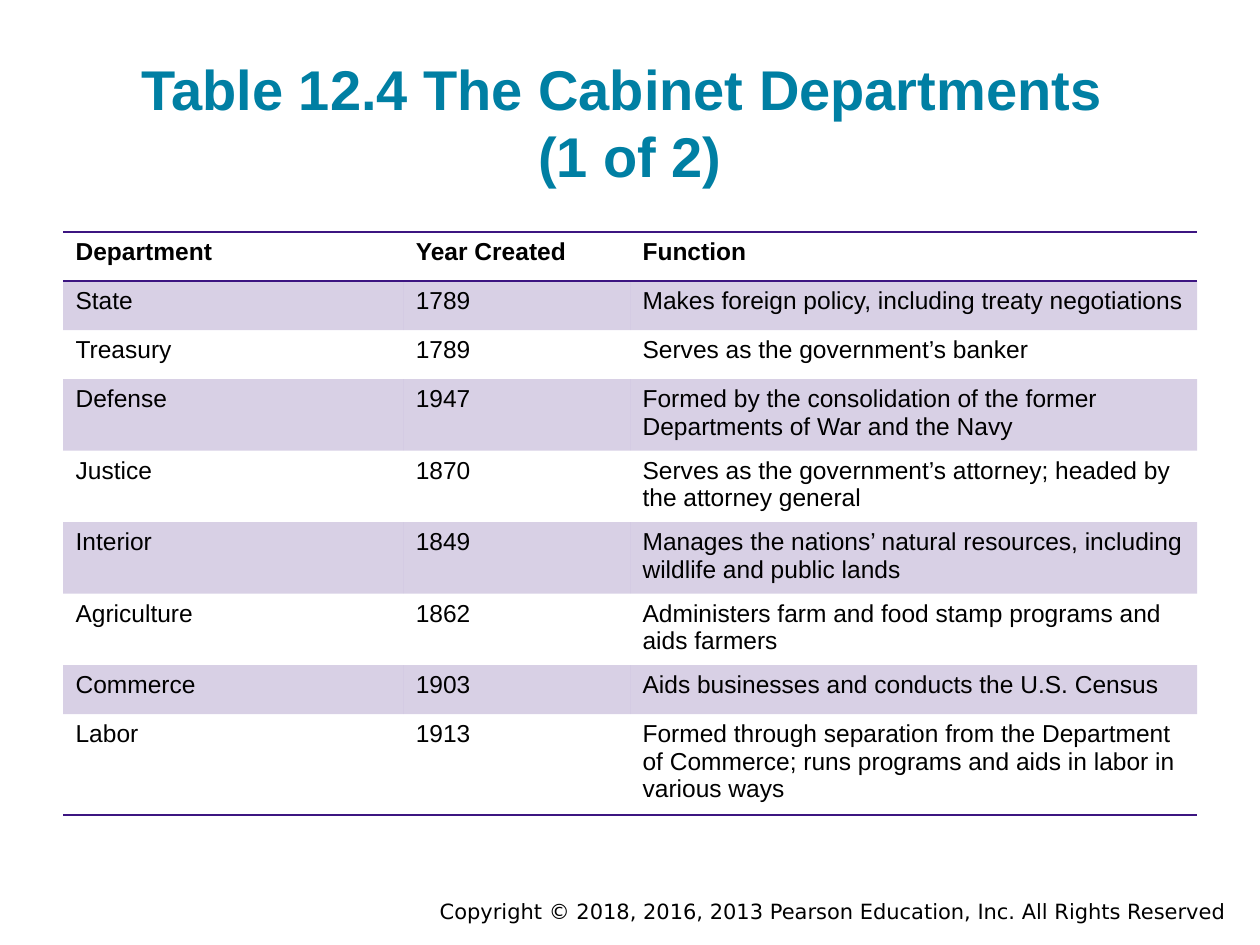
"""Build the slide with the table of Cabinet departments."""
from lxml import etree
from pptx import Presentation
from pptx.dml.color import RGBColor
from pptx.enum.text import MSO_ANCHOR, MSO_AUTO_SIZE, PP_ALIGN
from pptx.oxml.ns import qn
from pptx.util import Inches, Pt

CENTER, RIGHT = PP_ALIGN.CENTER, PP_ALIGN.RIGHT
BOTTOM, NO_FIT = MSO_ANCHOR.BOTTOM, MSO_AUTO_SIZE.NONE
TEAL = RGBColor(0x00, 0x7F, 0xA3)
PURPLE = RGBColor(0x3C, 0x15, 0x81)
BLACK = RGBColor(0, 0, 0)
NO_STYLE = "{2D5ABB26-0587-4C30-8999-92F81FD0307C}"

TITLE = "Table 12.4 The Cabinet Departments \v(1 of 2)"
COPYRIGHT = "Copyright © 2018, 2016, 2013 Pearson Education, Inc. All Rights Reserved"
ROWS = [
    ("Department", "Year Created", "Function"),
    ("State", "1789", "Makes foreign policy, including treaty negotiations"),
    ("Treasury", "1789", "Serves as the government’s banker"),
    ("Defense", "1947", "Formed by the consolidation of the former Departments of War and the Navy"),
    ("Justice", "1870", "Serves as the government’s attorney; headed by the attorney general"),
    ("Interior", "1849", "Manages the nations’ natural resources, including wildlife and public lands"),
    ("Agriculture", "1862", "Administers farm and food stamp programs and aids farmers"),
    ("Commerce", "1903", "Aids businesses and conducts the U.S. Census"),
    ("Labor", "1913", "Formed through separation from the Department of Commerce; "
                      "runs programs and aids in labor in various ways"),
]
COL_WIDTHS = [2.7, 1.8, 4.5]
ROW_HEIGHTS = [0.39] * 3 + [0.55] * 4 + [0.39, 0.77]


def style_text(tf, name, size, color, bold=False, align=None):
    for p in tf.paragraphs:
        p.alignment = align
        for r in p.runs:
            r.font.name, r.font.size, r.font.bold = name, Pt(size), bold
            r.font.color.rgb = color


def add_borders(cell, tags):
    tcPr = cell._tc.get_or_add_tcPr()
    for i, tag in enumerate(tags):
        ln = etree.Element(qn(tag), w=str(Pt(1)))
        fill = etree.SubElement(ln, qn("a:solidFill"))
        etree.SubElement(fill, qn("a:srgbClr"), val=str(PURPLE))
        tcPr.insert(i, ln)


def fill_band(cell):
    cell.fill.solid()
    cell.fill.fore_color.rgb = PURPLE
    color = cell._tc.tcPr.find(".//" + qn("a:srgbClr"))
    etree.SubElement(color, qn("a:alpha"), val="20000")


def add_title(s):
    sp = s.shapes.title
    sp.left, sp.top, sp.width, sp.height = map(Inches, (0.5, 0.24, 9, 1.36))
    tf = sp.text_frame
    tf.text = TITLE
    tf.auto_size, tf.vertical_anchor = NO_FIT, BOTTOM
    tf.margin_left = tf.margin_right = tf.margin_top = tf.margin_bottom = Inches(0.1)
    style_text(tf, "Arial", 32, TEAL, True, CENTER)


def add_departments(s):
    frame = s.shapes.add_table(len(ROWS), len(COL_WIDTHS), Inches(0.5), Inches(1.84),
                               Inches(sum(COL_WIDTHS)), Inches(sum(ROW_HEIGHTS)))
    table = frame.table
    table._tbl.tblPr.find(qn("a:tableStyleId")).text = NO_STYLE
    for column, width in zip(table.columns, COL_WIDTHS):
        column.width = Inches(width)
    borders = {0: ("a:lnT", "a:lnB"), len(ROWS) - 1: ("a:lnB",)}
    for i, (row, height, texts) in enumerate(zip(table.rows, ROW_HEIGHTS, ROWS)):
        row.height = Inches(height)
        for cell, text in zip(row.cells, texts):
            cell.text_frame.text = text
            style_text(cell.text_frame, "Arial", 14, BLACK, i == 0)
            if i % 2:
                fill_band(cell)
            else:
                cell.fill.background()
            add_borders(cell, borders.get(i, ()))


def add_copyright(s):
    sp = s.shapes.add_textbox(Inches(2), Inches(7.08), Inches(7.83), Inches(0.3))
    tf = sp.text_frame
    tf.word_wrap = True
    tf.text = COPYRIGHT
    style_text(tf, "DejaVu Sans", 12, BLACK, align=RIGHT)


def main():
    prs = Presentation()
    prs.slide_width, prs.slide_height = Inches(10), Inches(7.5)
    s = prs.slides.add_slide(prs.slide_layouts[5])
    add_copyright(s)
    add_title(s)
    add_departments(s)
    prs.save("out.pptx")


if __name__ == "__main__":
    main()
